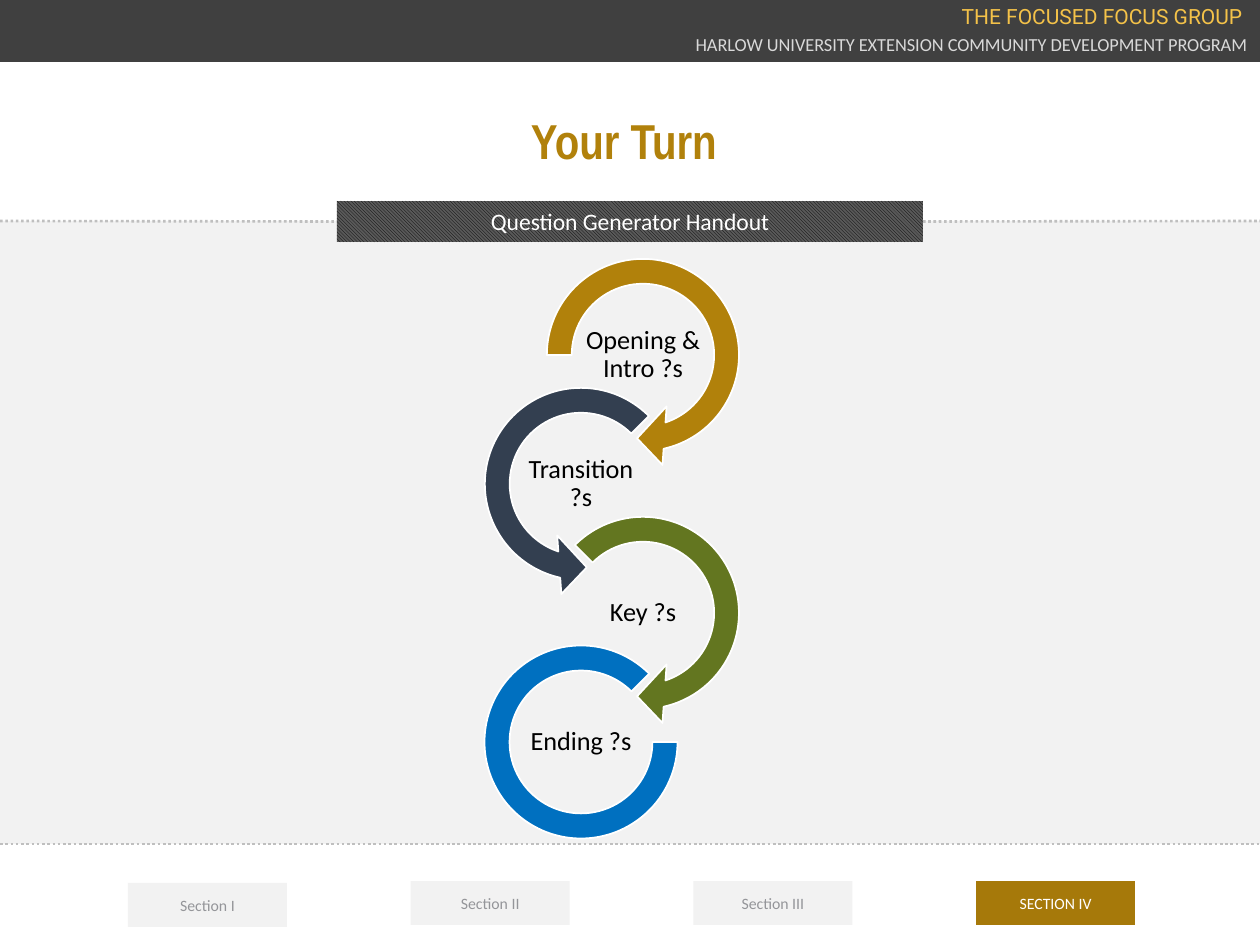
from lxml import etree
from pptx import Presentation
from pptx.dml.color import RGBColor
from pptx.enum.dml import MSO_LINE, MSO_PATTERN
from pptx.enum.shapes import MSO_CONNECTOR, MSO_SHAPE
from pptx.enum.text import MSO_ANCHOR, MSO_AUTO_SIZE, PP_ALIGN
from pptx.oxml.ns import qn
from pptx.util import Pt

RECT = MSO_SHAPE.RECTANGLE
RIGHT_TURN = MSO_SHAPE.CIRCULAR_ARROW
LEFT_TURN = MSO_SHAPE.LEFT_CIRCULAR_ARROW
ARC = MSO_SHAPE.BLOCK_ARC
STRAIGHT = MSO_CONNECTOR.STRAIGHT
DOTS = MSO_LINE.ROUND_DOT
DIAGONAL = MSO_PATTERN.LIGHT_DOWNWARD_DIAGONAL
CENTER, RIGHT = PP_ALIGN.CENTER, PP_ALIGN.RIGHT
MIDDLE = MSO_ANCHOR.MIDDLE
GROW = MSO_AUTO_SIZE.SHAPE_TO_FIT_TEXT

HEADER = [
    ("HARLOW UNIVERSITY EXTENSION COMMUNITY DEVELOPMENT PROGRAM",
     (437, 27, 823, 35), 10.5, "Calibri", "D9D9D9"),
    ("THE FOCUSED FOCUS GROUP", (444, -3, 811, 38), 12, "Roboto", "F4C249"),
]
SECTIONS = [
    ("Section I", 883, "F2F2F2", "949599"),
    ("Section II", 881, "F2F2F2", "949599"),
    ("Section III", 881, "F2F2F2", "949599"),
    ("SECTION IV", 881, "A6790A", "FFFFFF"),
]
STEPS = [
    ("Opening & Intro ?s", RIGHT_TURN, "B1810B", (0.11, 11.42, 45, 108, 0.13)),
    ("Transition ?s", LEFT_TURN, "333F50", (0.11, 11.42, 63, 189, 0.13)),
    ("Key ?s", RIGHT_TURN, "637620", (0.11, 11.42, 45, 135, 0.13)),
    ("Ending ?s", ARC, "0070C0", (0, 189, 0.13)),
]
STEP_X, STEP_Y, STEP_PITCH, STEP_SHIFT = 643, 355, 129, 62
ARROW_SIZE, ARC_SIZE = 226, 193
LABEL_W, LABEL_H = 119, 63


def px(n):
    return round(n * 914400 / 126)


def color(value):
    return RGBColor.from_string(value)


def add_shape(s, kind, box, fill, line=None):
    sp = s.shapes.add_shape(kind, *map(px, box))
    sp.shadow.inherit = False
    sp.fill.solid()
    sp.fill.fore_color.rgb = color(fill)
    if line:
        sp.line.color.rgb = color(line)
        sp.line.width = Pt(1)
    else:
        sp.line.fill.background()
    return sp


def write(sp, text, size, font, fill, align=CENTER, bold=False):
    tf = sp.text_frame
    tf.word_wrap = True
    tf.text = text
    p = tf.paragraphs[0]
    p.alignment = align
    r = p.runs[0]
    r.font.size = Pt(size)
    r.font.name = font
    r.font.bold = bold
    r.font.color.rgb = color(fill)
    return tf


def add_text(s, box, *style, **options):
    return write(s.shapes.add_textbox(*map(px, box)), *style, **options)


def add_dotted(s, start, end):
    c = s.shapes.add_connector(STRAIGHT, *map(px, start + end))
    c.line.color.rgb = color("BFBFBF")
    c.line.width = Pt(1.5)
    c.line.dash_style = DOTS
    etree.SubElement(c._element.spPr, qn("a:effectLst"))
    return c


def add_frame(s):
    add_shape(s, RECT, (0, 221, 1261, 623), "F2F2F2")
    banner = add_shape(s, RECT, (337, 201, 586, 41), "595959")
    banner.fill.patterned()
    banner.fill.pattern = DIAGONAL
    banner.fill.fore_color.rgb = color("000000")
    banner.fill.back_color.rgb = color("595959")
    write(banner, "Question Generator Handout", 13.5, "Calibri", "FFFFFF").auto_size = GROW
    add_dotted(s, (0, 221), (337, 222)).end_connect(banner, 1)
    add_dotted(s, (923, 222), (1260, 221)).begin_connect(banner, 3)
    add_dotted(s, (0, 844), (1260, 844))
    add_text(s, (310, 104, 639, 72), "Your Turn ", 28, "Arial Narrow", "B1810B",
             bold=True).auto_size = GROW
    add_shape(s, RECT, (0, -5, 1261, 67), "404040")
    for text, box, size, font, fill in HEADER:
        add_text(s, box, text, size, font, fill, align=RIGHT).auto_size = GROW


def add_sections(s):
    pitch = (976 - 128) / (len(SECTIONS) - 1)
    for i, (text, top, fill, ink) in enumerate(SECTIONS):
        sp = add_shape(s, RECT, (128 + i * pitch, top, 159, 44), fill)
        write(sp, text, 9, "Calibri", ink).vertical_anchor = MIDDLE


def add_steps(s):
    for i, (text, kind, fill, adjustments) in enumerate(STEPS):
        x = STEP_X - i % 2 * STEP_SHIFT
        y = STEP_Y + i * STEP_PITCH
        size = ARC_SIZE if kind == ARC else ARROW_SIZE
        sp = add_shape(s, kind, (x - size / 2, y - size / 2, size, size), fill, "FFFFFF")
        for j, value in enumerate(adjustments):
            sp.adjustments[j] = value
        box = (x - LABEL_W / 2, y - LABEL_H / 2, LABEL_W, LABEL_H)
        tf = add_text(s, box, text, 15, "Calibri", "000000")
        tf.vertical_anchor = MIDDLE
        tf.margin_left = tf.margin_right = tf.margin_top = tf.margin_bottom = px(1)
        tf.paragraphs[0].line_spacing = 0.9


def main():
    prs = Presentation()
    prs.slide_width, prs.slide_height = px(1260), px(945)
    s = prs.slides.add_slide(prs.slide_layouts[6])
    add_frame(s)
    add_sections(s)
    add_steps(s)
    prs.save("out.pptx")


if __name__ == "__main__":
    main()
